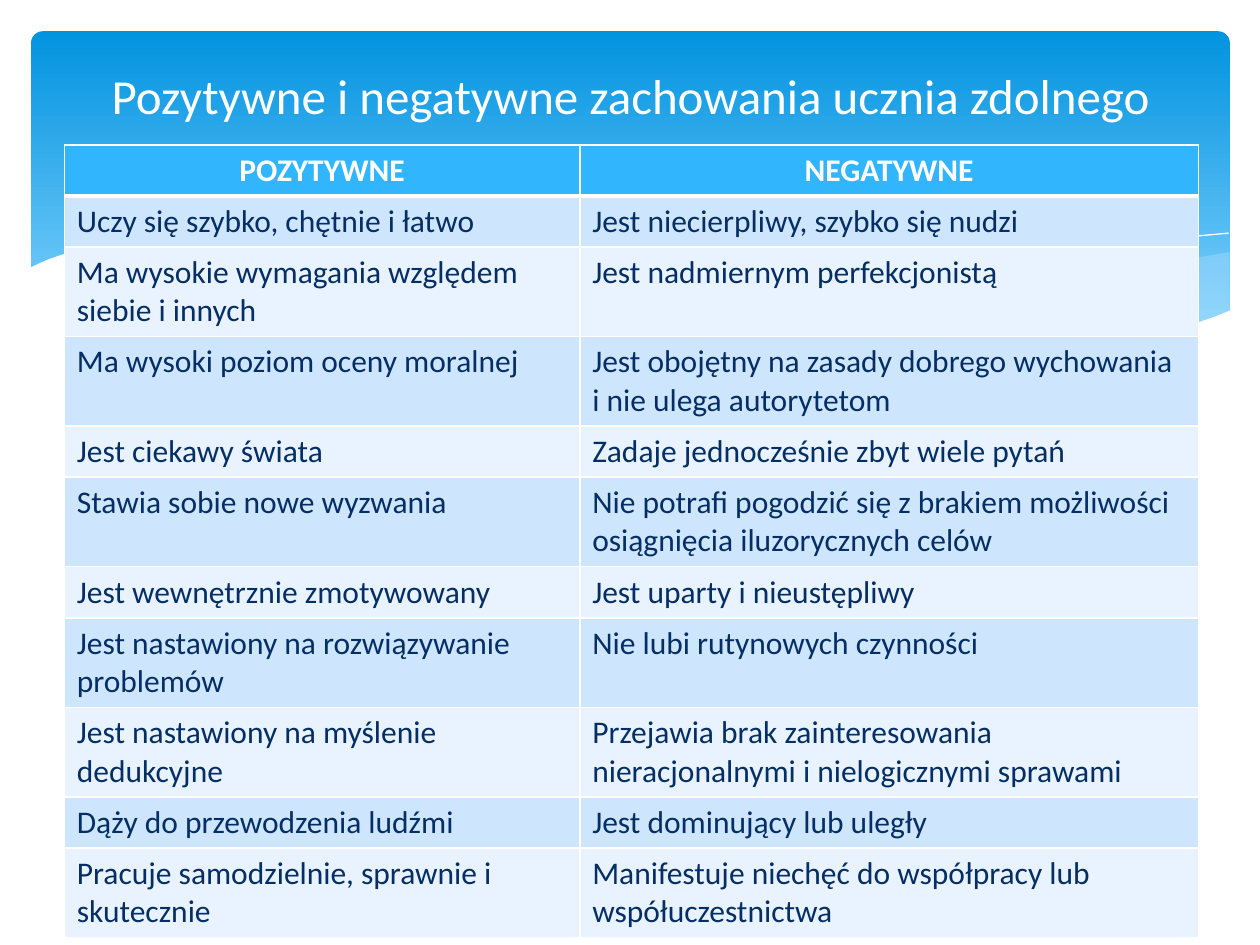
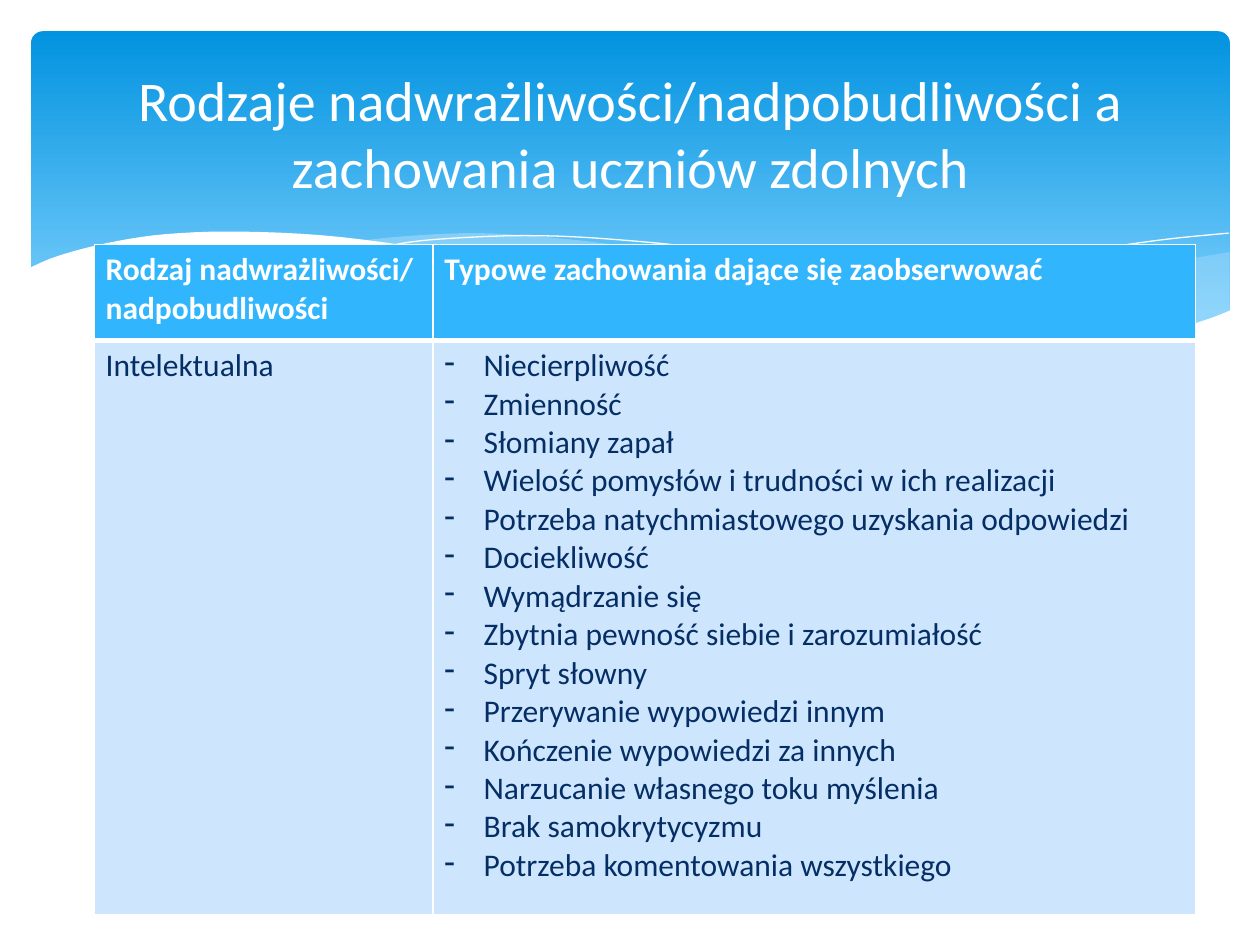
from lxml.etree import SubElement
from pptx import Presentation
from pptx.dml.color import RGBColor
from pptx.enum.shapes import MSO_SHAPE
from pptx.enum.text import MSO_ANCHOR, PP_ALIGN
from pptx.oxml.ns import qn
from pptx.util import Cm, Pt

FONT = "Calibri"
COLORS = {
    "white": "FFFFFF",
    "band_top": "0293E0",
    "band_bottom": "83D3FE",
    "wave": "C6E7FC",
    "header": "31B6FD",
    "row_dark": "CEE5FE",
    "row_light": "E8F3FF",
    "text": "052E65",
}

# Knots of the backdrop curves, in centimetres
RIGHT_WAVE_TOP = [(16.79, 6.73), (19.13, 6.3), (21.87, 5.66), (23.39, 5.33), (24.79, 5.08)]
RIGHT_WAVE_BOTTOM = [(24.79, 6.27), (23.75, 6.65), (22.78, 6.86), (21.69, 7.01),
                     (20.4, 7.06), (18.92, 6.98), (16.79, 6.73)]
MIDDLE_WAVE_TOP = [(7.26, 4.85), (8.33, 4.75), (9.65, 4.7), (11.23, 4.8), (13.06, 5.03),
                   (14.83, 5.36), (16.97, 5.87), (19.69, 6.45), (22.68, 6.93)]
MIDDLE_WAVE_BOTTOM = [(22.68, 6.93), (21.54, 7.04), (20.22, 7.06), (18.69, 6.98), (16.51, 6.71),
                      (14.38, 6.3), (11.4, 5.64), (9.19, 5.16), (7.26, 4.85)]
FALLING_LINE = [(7.85, 4.95), (8.74, 4.83), (10.57, 4.75), (12.42, 4.83), (14.78, 5.08),
                (17.65, 5.56), (20.19, 6.12), (23.04, 6.91)]
RISING_LINE = [(15.57, 6.53), (17.65, 5.97), (19.71, 5.49), (22, 5.05), (23.47, 4.83), (24.77, 4.7)]
PAGE_EDGE = [(0.58, 5.41), (1.17, 5.16), (2.16, 4.9), (3.35, 4.72), (4.9, 4.67), (6.88, 4.78),
             (9.27, 5.13), (11.35, 5.59), (13.44, 6.07), (15.9, 6.55), (17.98, 6.86),
             (19.76, 7.01), (20.9, 7.04), (22.23, 6.93), (23.37, 6.73), (24.36, 6.43), (24.82, 6.25)]
PAGE_CORNERS = [(24.82, 8.36), (0.58, 8.36)]

BEHAVIOURS = [
    ("POZYTYWNE", "NEGATYWNE"),
    ("Uczy się szybko, chętnie i łatwo", "Jest niecierpliwy, szybko się nudzi"),
    ("Ma wysokie wymagania względem siebie i innych", "Jest nadmiernym perfekcjonistą"),
    ("Ma wysoki poziom oceny moralnej",
     "Jest obojętny na zasady dobrego wychowania i nie ulega autorytetom"),
    ("Jest ciekawy świata", "Zadaje jednocześnie zbyt wiele pytań"),
    ("Stawia sobie nowe wyzwania",
     "Nie potrafi pogodzić się z brakiem możliwości osiągnięcia iluzorycznych celów"),
    ("Jest wewnętrznie zmotywowany", "Jest uparty i nieustępliwy"),
    ("Jest nastawiony na rozwiązywanie problemów", "Nie lubi rutynowych czynności"),
    ("Jest nastawiony na myślenie dedukcyjne",
     "Przejawia brak zainteresowania nieracjonalnymi i nielogicznymi sprawami"),
    ("Dąży do przewodzenia ludźmi", "Jest dominujący lub uległy"),
    ("Pracuje samodzielnie, sprawnie i skutecznie",
     "Manifestuje niechęć do współpracy lub współuczestnictwa"),
]

INTELLECTUAL_SIGNS = [
    "Niecierpliwość",
    "Zmienność",
    "Słomiany zapał",
    "Wielość pomysłów i trudności w ich realizacji",
    "Potrzeba natychmiastowego uzyskania odpowiedzi",
    "Dociekliwość",
    "Wymądrzanie się",
    "Zbytnia pewność siebie i zarozumiałość",
    "Spryt słowny",
    "Przerywanie wypowiedzi innym",
    "Kończenie wypowiedzi za innych",
    "Narzucanie własnego toku myślenia",
    "Brak samokrytycyzmu",
    "Potrzeba komentowania wszystkiego",
]
SENSITIVITIES = [
    ("Rodzaj nadwrażliwości/ nadpobudliwości", "Typowe zachowania dające się zaobserwować"),
    ("Intelektualna", INTELLECTUAL_SIGNS),
]


def rgb(name):
    return RGBColor.from_string(COLORS[name])


def smooth(knots, steps=5):
    """Return points of a Catmull-Rom curve through the knots."""
    padded = [knots[0], *knots, knots[-1]]
    points = [knots[0]]
    for a, b, c, d in zip(padded, padded[1:], padded[2:], padded[3:]):
        for step in range(1, steps + 1):
            t = step / steps
            points.append(tuple(
                (2 * q + (r - p) * t + (2 * p - 5 * q + 4 * r - s) * t ** 2
                 + (3 * q - p - 3 * r + s) * t ** 3) / 2
                for p, q, r, s in zip(a, b, c, d)))
    return points


def add_outline(slide, points, closed):
    first, *rest = [(Cm(x), Cm(y)) for x, y in points]
    builder = slide.shapes.build_freeform(*first)
    builder.add_line_segments(rest, close=closed)
    outline = builder.convert_to_shape()
    outline.shadow.inherit = False
    return outline


def add_area(slide, points, color, opacity=100):
    area = add_outline(slide, points, True)
    area.line.fill.background()
    area.fill.solid()
    area.fill.fore_color.rgb = rgb(color)
    if opacity < 100:
        tint = area.fill._xPr.find(qn("a:solidFill"))[0]
        SubElement(tint, qn("a:alpha"), val=str(opacity * 1000))
    return area


def add_hairline(slide, knots):
    hairline = add_outline(slide, smooth(knots), False)
    hairline.fill.background()
    hairline.line.color.rgb = rgb("white")
    hairline.line.width = Pt(0)
    return hairline


def add_band(slide):
    band = slide.shapes.add_shape(MSO_SHAPE.ROUNDED_RECTANGLE, Cm(0.63), Cm(0.63), Cm(24.16), Cm(6.86))
    band.adjustments[0] = 0.034
    band.shadow.inherit = False
    band.line.fill.background()
    band.fill.gradient()
    band.fill.gradient_angle = 270
    for stop, position, color in zip(band.fill.gradient_stops, (0, 0.9), ("band_top", "band_bottom")):
        stop.position = position
        stop.color.rgb = rgb(color)
    return band


def move_backdrop_to_layout(slide, layout):
    """Draw the wavy band once and keep it on the shared layout."""
    for placeholder in list(layout.placeholders)[1:]:
        layout.shapes.element.remove(placeholder.element)
    backdrop = [
        add_band(slide),
        add_area(slide, smooth(RIGHT_WAVE_TOP) + smooth(RIGHT_WAVE_BOTTOM), "wave", 29),
        add_area(slide, smooth(MIDDLE_WAVE_TOP) + smooth(MIDDLE_WAVE_BOTTOM), "wave", 40),
        add_hairline(slide, FALLING_LINE),
        add_hairline(slide, RISING_LINE),
        add_area(slide, smooth(PAGE_EDGE) + PAGE_CORNERS, "white"),
    ]
    for part in backdrop:
        layout.shapes.element.append(part.element)


def set_font(paragraph, size, color, bold=False):
    font = paragraph.font
    font.name, font.size, font.bold = FONT, Pt(size), bold
    font.color.rgb = rgb(color)


def set_title(slide, text, size, top, height):
    title = slide.shapes.title
    title.left, title.top, title.width, title.height = Cm(1.28), Cm(top), Cm(22.86), Cm(height)
    title.text_frame.text = text
    title.text_frame.vertical_anchor = MSO_ANCHOR.MIDDLE
    paragraph = title.text_frame.paragraphs[0]
    paragraph.alignment = PP_ALIGN.CENTER
    set_font(paragraph, size, "white")


def set_borders(cell, row):
    widths = {"L": 1, "R": 1, "T": 3 if row == 1 else 1, "B": 3 if row == 0 else 1}
    properties = cell._tc.get_or_add_tcPr()
    for side, width in widths.items():
        border = SubElement(properties, qn(f"a:ln{side}"), w=str(Pt(width)))
        fill = SubElement(border, qn("a:solidFill"))
        SubElement(fill, qn("a:srgbClr"), val=COLORS["white"])


def add_dash(paragraph):
    properties = paragraph._p.get_or_add_pPr()
    properties.set("marL", str(Cm(0.79)))
    properties.set("indent", str(-Cm(0.79)))
    SubElement(properties, qn("a:buChar"), char="-")


def fill_cell(cell, content, row, header_align):
    set_borders(cell, row)
    cell.fill.solid()
    cell.fill.fore_color.rgb = rgb("header" if row == 0 else "row_dark" if row % 2 else "row_light")
    is_list = isinstance(content, list)
    cell.text_frame.text = "\n".join(content) if is_list else content
    for paragraph in cell.text_frame.paragraphs:
        if is_list:
            add_dash(paragraph)
        if row == 0:
            paragraph.alignment = header_align
        set_font(paragraph, 18, "text" if row else "white", bold=row == 0)


def add_grid(slide, rows, left, top, widths, heights, header_align=PP_ALIGN.LEFT, side_margin=0.25):
    grid = slide.shapes.add_table(len(rows), len(widths), Cm(left), Cm(top),
                                  Cm(sum(widths)), Cm(sum(heights))).table
    for column, width in zip(grid.columns, widths):
        column.width = Cm(width)
    for r, (contents, height) in enumerate(zip(rows, heights)):
        grid.rows[r].height = Cm(height)
        for c, content in enumerate(contents):
            cell = grid.cell(r, c)
            cell.margin_left = cell.margin_right = Cm(side_margin)
            fill_cell(cell, content, r, header_align)


def main():
    prs = Presentation()
    prs.slide_width, prs.slide_height = Cm(25.4), Cm(19.05)
    layout = prs.slide_layouts[5]

    # Positive and negative behaviours
    behaviours = prs.slides.add_slide(layout)
    move_backdrop_to_layout(behaviours, layout)
    set_title(behaviours, "Pozytywne i negatywne zachowania ucznia zdolnego", 28, 0.33, 3.18)
    add_grid(behaviours, BEHAVIOURS, 1.3, 2.92, (10.39, 12.47), [1.03] * len(BEHAVIOURS),
             PP_ALIGN.CENTER)

    # Kinds of oversensitivity
    sensitivities = prs.slides.add_slide(layout)
    set_title(sensitivities, "Rodzaje nadwrażliwości/nadpobudliwości a zachowania uczniów zdolnych",
              32, 0.94, 3.48)
    add_grid(sensitivities, SENSITIVITIES, 1.9, 4.93, (6.83, 15.37), (1.93, 11.58), side_margin=0.23)

    prs.save("out.pptx")


if __name__ == "__main__":
    main()
